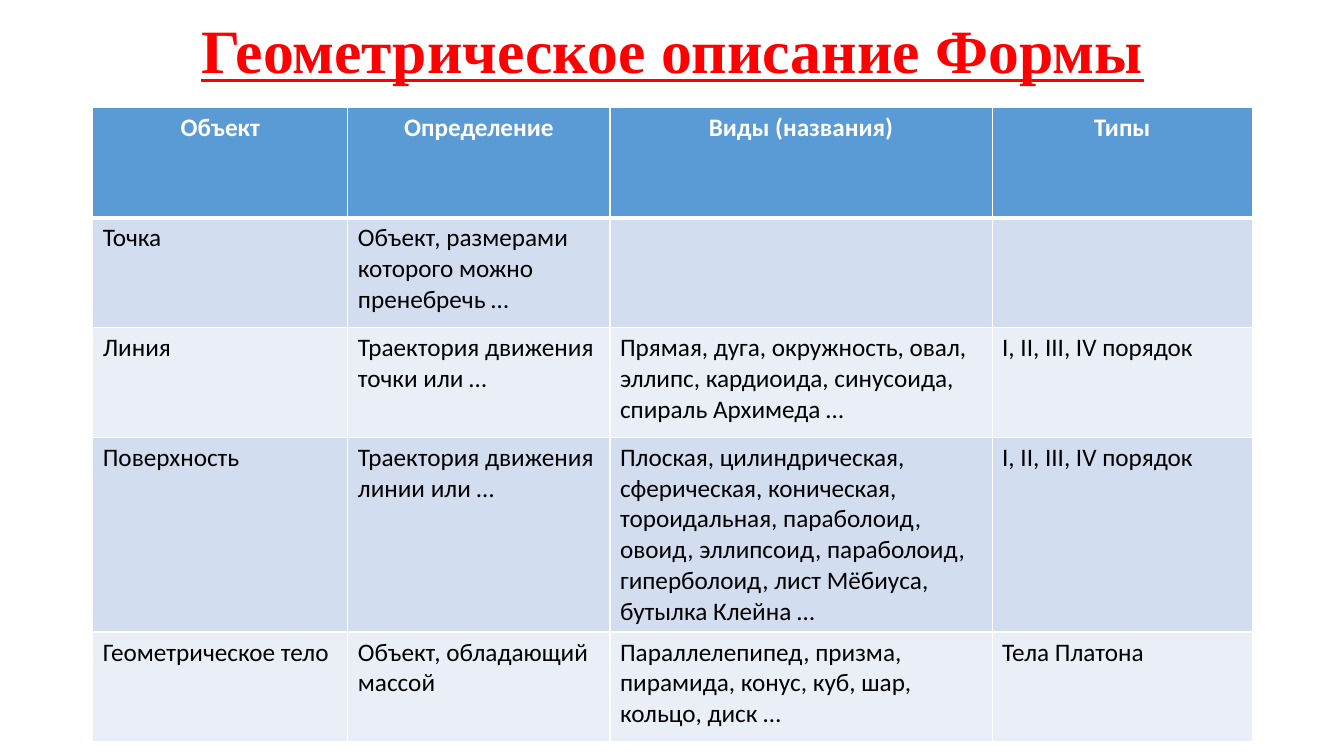
import pptx
import pptx.util
import pptx.dml.color
import pptx.enum.text
import lxml.etree
from pptx.util import Inches, Pt
from pptx.dml.color import RGBColor
from pptx.enum.text import PP_ALIGN, MSO_ANCHOR
import pptx.oxml.ns

RED = RGBColor(0xFF, 0x00, 0x00)
WHITE = RGBColor(0xFF, 0xFF, 0xFF)
BLACK = RGBColor(0x00, 0x00, 0x00)
HEADER_BLUE = RGBColor(0x5B, 0x9B, 0xD5)
BAND_DARK = RGBColor(0xD2, 0xDE, 0xEF)
BAND_LIGHT = RGBColor(0xEA, 0xEF, 0xF7)

COLUMN_WIDTHS = [2.53, 2.6, 3.79, 2.58]
ROW_HEIGHT = 1.09
ROWS = [
    ["Объект", "Определение", "Виды (названия)", "Типы"],
    ["Точка", "Объект, размерами которого можно пренебречь …", "", ""],
    ["Линия", "Траектория движения точки или …",
     "Прямая, дуга, окружность, овал, эллипс, кардиоида, синусоида, "
     "спираль Архимеда …", "I, II, III, IV порядок"],
    ["Поверхность", "Траектория движения линии или …",
     "Плоская, цилиндрическая, сферическая, коническая, тороидальная, "
     "параболоид, овоид, эллипсоид, параболоид, гиперболоид, лист Мёбиуса, "
     "бутылка Клейна …", "I, II, III, IV порядок"],
    ["Геометрическое тело", "Объект, обладающий массой",
     "Параллелепипед, призма, пирамида, конус, куб, шар, кольцо, диск …",
     "Тела Платона"],
]


def add_span(para, text, font_name, size, color, bold):
    span = para.add_run()
    span.text = text
    span.font.name = font_name
    span.font.size = Pt(size)
    span.font.color.rgb = color
    span.font.bold = bold
    return span


def place_title(page, left, top, width, height):
    box = page.shapes.title
    box.left, box.top = Inches(left), Inches(top)
    box.width, box.height = Inches(width), Inches(height)
    frame = box.text_frame
    frame.word_wrap = True
    frame.vertical_anchor = MSO_ANCHOR.MIDDLE
    para = frame.paragraphs[0]
    para.alignment = PP_ALIGN.CENTER
    para.line_spacing = 0.9
    span = add_span(para, "Геометрическое описание Формы",
                    "Times New Roman", 44, RED, True)
    span.font.underline = True


def set_borders(cell, widths):
    """Draw white borders; widths maps a side (L, R, T, B) to points."""
    properties = cell._tc.get_or_add_tcPr()
    for side, points in widths.items():
        line = lxml.etree.SubElement(
            properties, pptx.oxml.ns.qn("a:ln" + side), w=str(Pt(points)))
        fill = lxml.etree.SubElement(line, pptx.oxml.ns.qn("a:solidFill"))
        lxml.etree.SubElement(
            fill, pptx.oxml.ns.qn("a:srgbClr"), val=str(WHITE))


def fill_cell(cell, text, row_index):
    is_header = row_index == 0
    # Borders come before the fill; a thick rule divides header and body
    set_borders(cell, {"L": 1, "R": 1, "T": 3 if row_index == 1 else 1,
                       "B": 3 if is_header else 1})
    cell.fill.solid()
    if is_header:
        cell.fill.fore_color.rgb = HEADER_BLUE
    else:
        cell.fill.fore_color.rgb = BAND_DARK if row_index % 2 else BAND_LIGHT
    para = cell.text_frame.paragraphs[0]
    para.font.size = Pt(18)
    if is_header:
        para.alignment = PP_ALIGN.CENTER
    if text:
        add_span(para, text, "Calibri", 18,
                 WHITE if is_header else BLACK, is_header)


def place_table(page, left, top):
    frame = page.shapes.add_table(
        len(ROWS), len(COLUMN_WIDTHS), Inches(left), Inches(top),
        Inches(sum(COLUMN_WIDTHS)), Inches(ROW_HEIGHT * len(ROWS)))
    table = frame.table
    for column, width in zip(table.columns, COLUMN_WIDTHS):
        column.width = Inches(width)
    for row_index, texts in enumerate(ROWS):
        table.rows[row_index].height = Inches(ROW_HEIGHT)
        for column_index, text in enumerate(texts):
            fill_cell(table.cell(row_index, column_index), text, row_index)


def main():
    deck = pptx.Presentation()
    deck.slide_width, deck.slide_height = Inches(13.33), Inches(7.5)
    # Title-only page
    page = deck.slides.add_slide(deck.slide_layouts[5])
    place_title(page, 0.92, 0, 11.5, 1.07)
    place_table(page, 0.92, 1.07)
    deck.save("out.pptx")


if __name__ == "__main__":
    main()
